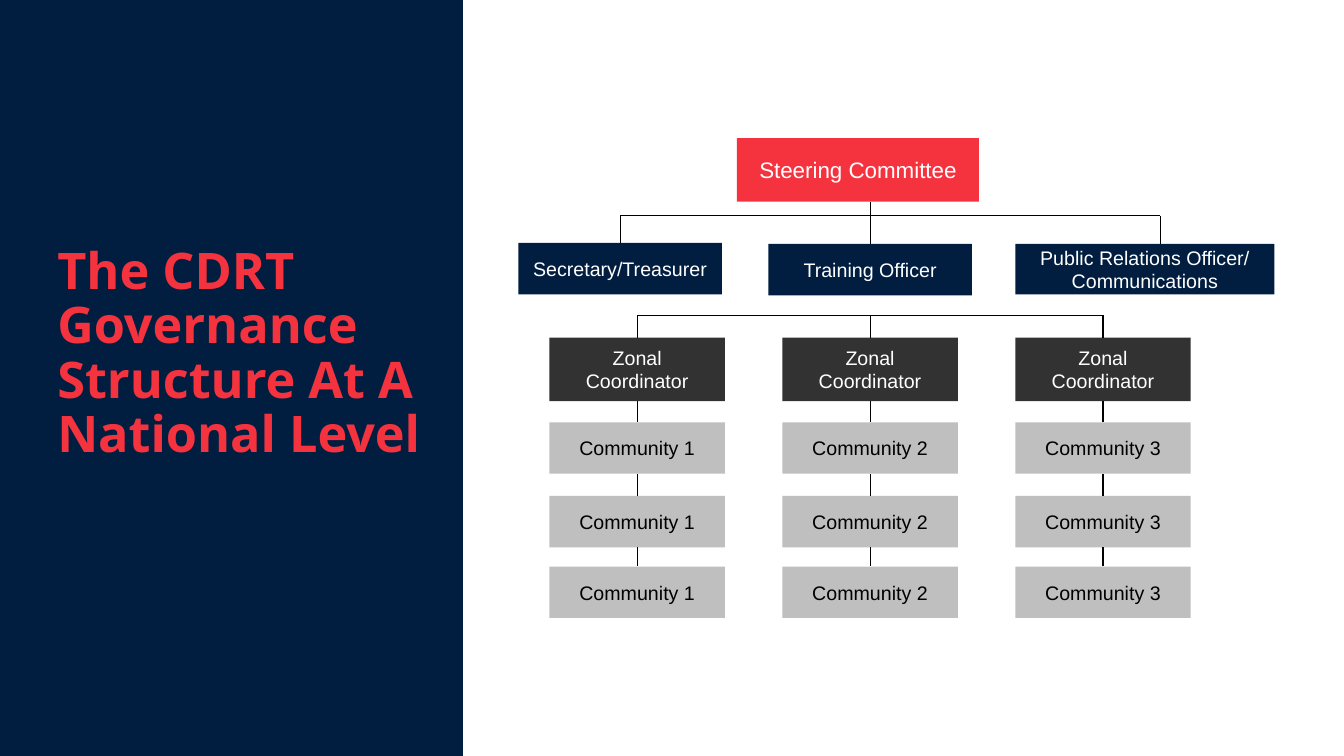
from lxml.etree import SubElement
from pptx import Presentation
from pptx.dml.color import RGBColor
from pptx.enum.shapes import MSO_CONNECTOR as LINE, MSO_SHAPE as SHAPE
from pptx.enum.text import MSO_ANCHOR as ANCHOR, PP_ALIGN as ALIGN
from pptx.oxml.ns import qn
from pptx.util import Inches, Pt

NAVY, RED, CHARCOAL, GREY = "011E41", "F5333F", "323232", "BFBFBF"
WHITE, BLACK = "FFFFFF", "000000"

TITLE = ["The CDRT Governance Structure At A", "National Level"]
COMMITTEE = ("Steering Committee", (7.31, 1.37, 2.4, 0.63))
OFFICERS = [
    ("Secretary/Treasurer", (5.14, 2.41, 2.02, 0.51), 6.15),
    ("Training Officer", (7.62, 2.42, 2.02, 0.51), 8.63),
    ("Public Relations Officer/ Communications", (10.07, 2.42, 2.57, 0.5), 11.51),
]
ZONE = "Zonal Coordinator"
COMMUNITIES = ["Community 1", "Community 2", "Community 3"]

ZONE_LEFT, ZONE_STEP, ZONE_WIDTH = 5.45, 2.31, 1.74
ZONE_TOP, ZONE_HEIGHT = 3.35, 0.63
COMMUNITY_TOPS, COMMUNITY_HEIGHT = [4.19, 4.92, 5.62], 0.51
OFFICER_RAIL, ZONE_RAIL = 2.14, 3.13
COMMITTEE_BOTTOM = 2.0

deck = Presentation()
deck.slide_width, deck.slide_height = Inches(13.33), Inches(7.5)
slide = deck.slides.add_slide(deck.slide_layouts[6])


def color(code):
    return RGBColor.from_string(code)


def write(shape, lines, size=14, font="Arial", ink=WHITE, bold=False,
          align=ALIGN.CENTER, spacing=None):
    frame = shape.text_frame
    frame.word_wrap = True
    frame.vertical_anchor = ANCHOR.MIDDLE
    frame.text = "\n".join(lines)
    for paragraph in frame.paragraphs:
        paragraph.alignment = align
        paragraph.line_spacing = spacing
        face = paragraph.runs[0].font
        face.size, face.name, face.bold = Pt(size), font, bold
        face.color.rgb = color(ink)


def box(place, fill, text=None, **style):
    shape = slide.shapes.add_shape(SHAPE.RECTANGLE, *map(Inches, place))
    shape.shadow.inherit = False
    shape.fill.solid()
    shape.fill.fore_color.rgb = color(fill)
    shape.line.fill.background()
    if text:
        write(shape, [text], **style)
    return shape


def join(start, end, upper=None, lower=None):
    link = slide.shapes.add_connector(LINE.STRAIGHT, *map(Inches, start + end))
    link.line.color.rgb = color(BLACK)
    link.line.width = Pt(0.75)
    SubElement(link._element.spPr, qn("a:effectLst"))
    if upper is not None:
        link.begin_connect(upper, 2)
    if lower is not None:
        link.end_connect(lower, 0)


box((0, 0, 4.59, 7.5), NAVY)
title = slide.shapes.add_textbox(*map(Inches, (0.47, 1.06, 3.86, 4.92)))
write(title, TITLE, size=36, font="Open Sans", ink=RED, bold=True,
      align=ALIGN.LEFT, spacing=0.9)

name, place = COMMITTEE
box(place, RED, name, size=16)

officers = [box(place, NAVY, name) for name, place, _ in OFFICERS]
drops = [drop for _, _, drop in OFFICERS]
secretary, training, relations = officers
trunk = drops[1]
join((drops[0], OFFICER_RAIL), (drops[2], OFFICER_RAIL))
join((drops[0], OFFICER_RAIL), (drops[0], 2.41), lower=secretary)
join((trunk, COMMITTEE_BOTTOM), (trunk, 2.42), lower=training)
join((drops[2], OFFICER_RAIL), (drops[2], 2.42))

centers = []
for column, community in enumerate(COMMUNITIES):
    left = ZONE_LEFT + column * ZONE_STEP
    center = left + ZONE_WIDTH / 2
    centers.append(center)
    above = box((left, ZONE_TOP, ZONE_WIDTH, ZONE_HEIGHT), CHARCOAL, ZONE)
    join((center, ZONE_RAIL), (center, ZONE_TOP),
         upper=training if center == centers[0] + ZONE_STEP else None, lower=above)
    for top in COMMUNITY_TOPS:
        below = box((left, top, ZONE_WIDTH, COMMUNITY_HEIGHT), GREY, community, ink=BLACK)
        join((center, top), (center, top), upper=above, lower=below)
        above = below
join((centers[0], ZONE_RAIL), (centers[-1], ZONE_RAIL))

deck.save("out.pptx")
